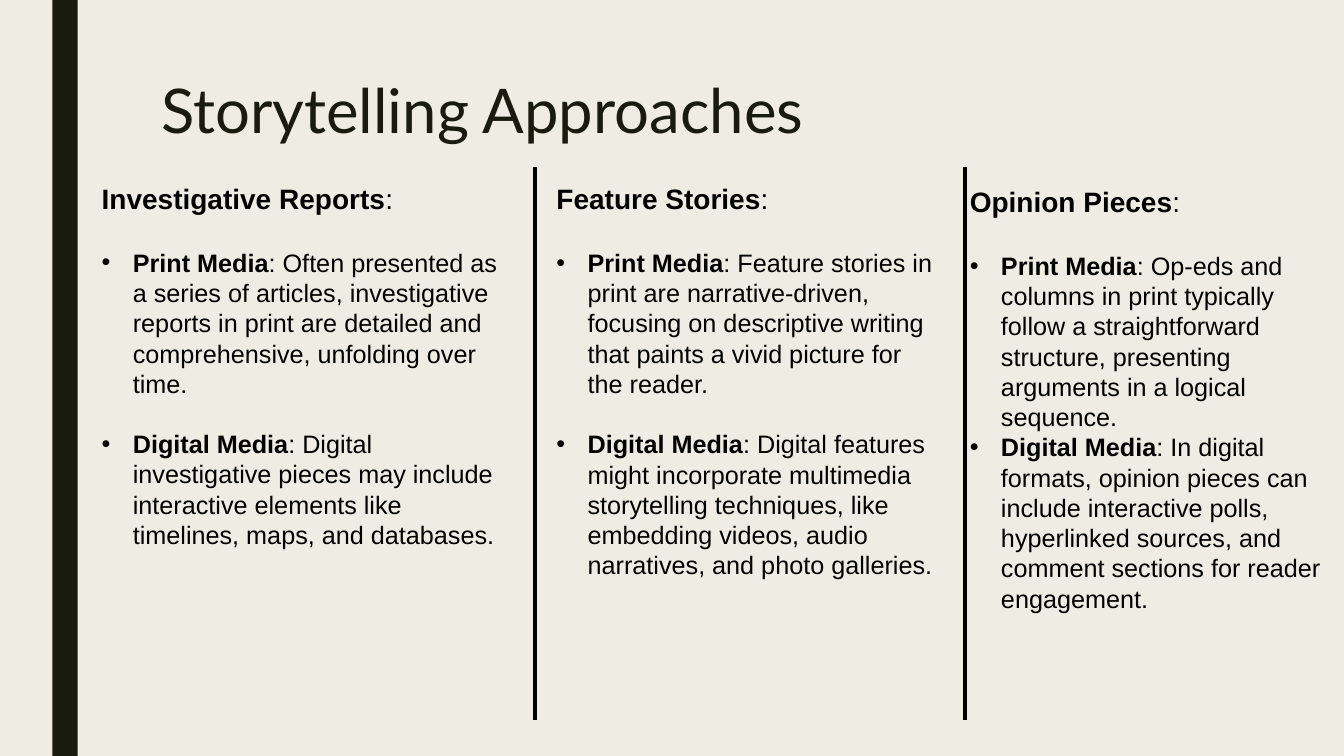
from lxml import etree
from pptx import Presentation
from pptx.dml.color import RGBColor
from pptx.enum.shapes import MSO_CONNECTOR, MSO_SHAPE
from pptx.enum.text import MSO_ANCHOR, PP_ALIGN
from pptx.oxml.ns import qn
from pptx.util import Inches, Pt

STRAIGHT = MSO_CONNECTOR.STRAIGHT
RECTANGLE = MSO_SHAPE.RECTANGLE
TOP = MSO_ANCHOR.TOP
LEFT = PP_ALIGN.LEFT

BACKGROUND, DARK, BLACK = "EFEDE3", "191B0E", "000000"
HEADING_SIZE, BODY_SIZE = 20, 18
HEADING_GAP, BULLET_GAP = 23, 21.6
INDENT = Inches(0.31)

# Each column: box, heading, gap before the second bullet, bullets
COLUMNS = [
    ((0.91, 1.75, 4.14, 3.8), "Investigative Reports", BULLET_GAP, [
        ("Print Media", ": Often presented as a series of articles, investigative reports "
                        "in print are detailed and comprehensive, unfolding over time."),
        ("Digital Media", ": Digital investigative pieces may include interactive elements "
                          "like timelines, maps, and databases."),
    ]),
    ((5.42, 1.75, 4.01, 4.11), "Feature Stories", BULLET_GAP, [
        ("Print Media", ": Feature stories in print are narrative-driven, focusing on "
                        "descriptive writing that paints a vivid picture for the reader."),
        ("Digital Media", ": Digital features might incorporate multimedia storytelling "
                          "techniques, like embedding videos, audio narratives, and photo "
                          "galleries."),
    ]),
    ((9.52, 1.78, 3.7, 4.41), "Opinion Pieces", 0, [
        ("Print Media", ": Op-eds and columns in print typically follow a straightforward "
                        "structure, presenting arguments in a logical sequence."),
        ("Digital Media", ": In digital formats, opinion pieces can include interactive "
                          "polls, hyperlinked sources, and comment sections for reader "
                          "engagement."),
    ]),
]
DIVIDERS = [5.31, 9.57]


def color(value):
    return RGBColor.from_string(value)


def add_side_bar(slide, left, top, width, height):
    bar = slide.shapes.add_shape(RECTANGLE, *map(Inches, (left, top, width, height)))
    bar.shadow.inherit = False
    bar.fill.solid()
    bar.fill.fore_color.rgb = color(DARK)
    bar.line.fill.background()


def format_title(slide, left, top, width, height):
    title = slide.shapes.title
    title.left, title.top, title.width, title.height = map(
        Inches, (left, top, width, height))
    frame = title.text_frame
    frame.text = "Storytelling Approaches"
    frame.vertical_anchor = TOP
    paragraph = frame.paragraphs[0]
    paragraph.alignment = LEFT
    paragraph.line_spacing = 0.89
    font = paragraph.runs[0].font
    font.name, font.size = "Lato", Pt(44)
    font.color.rgb = color(DARK)


def add_divider(slide, x, top, bottom):
    line = slide.shapes.add_connector(
        STRAIGHT, Inches(x), Inches(top), Inches(x), Inches(bottom))
    line.line.color.rgb = color(BLACK)
    line.line.width = Pt(2.75)
    etree.SubElement(line._element.spPr, qn("a:effectLst"))


def add_bullet(paragraph):
    properties = paragraph._p.get_or_add_pPr()
    properties.set("marL", str(INDENT))
    properties.set("indent", str(-INDENT))
    etree.SubElement(properties, qn("a:buFont"), typeface="Arial")
    etree.SubElement(properties, qn("a:buChar"), char="•")


def add_labelled_text(paragraph, label, text, size):
    for content, bold in ((label, True), (text, False)):
        run = paragraph.add_run()
        run.text = content
        font = run.font
        font.name, font.size, font.bold = "Arial", Pt(size), bold
        font.color.rgb = color(BLACK)


def add_column(slide, box, heading, bullet_gap, bullets):
    frame = slide.shapes.add_textbox(*map(Inches, box)).text_frame
    frame.word_wrap = True
    add_labelled_text(frame.paragraphs[0], heading, ":", HEADING_SIZE)
    for gap, (label, text) in zip((HEADING_GAP, bullet_gap), bullets):
        paragraph = frame.add_paragraph()
        paragraph.space_before = Pt(gap)
        add_bullet(paragraph)
        add_labelled_text(paragraph, label, text, BODY_SIZE)


def build_slide(presentation):
    slide = presentation.slides.add_slide(presentation.slide_layouts[5])
    slide.background.fill.solid()
    slide.background.fill.fore_color.rgb = color(BACKGROUND)
    add_side_bar(slide, 0.52, 0, 0.25, 7.5)
    format_title(slide, 1.5, 0.75, 10.5, 1.62)
    for x in DIVIDERS:
        add_divider(slide, x, 1.66, 7.14)
    for column in COLUMNS:
        add_column(slide, *column)


def main():
    presentation = Presentation()
    presentation.slide_width, presentation.slide_height = Inches(13.33), Inches(7.5)
    build_slide(presentation)
    presentation.save("out.pptx")


if __name__ == "__main__":
    main()
